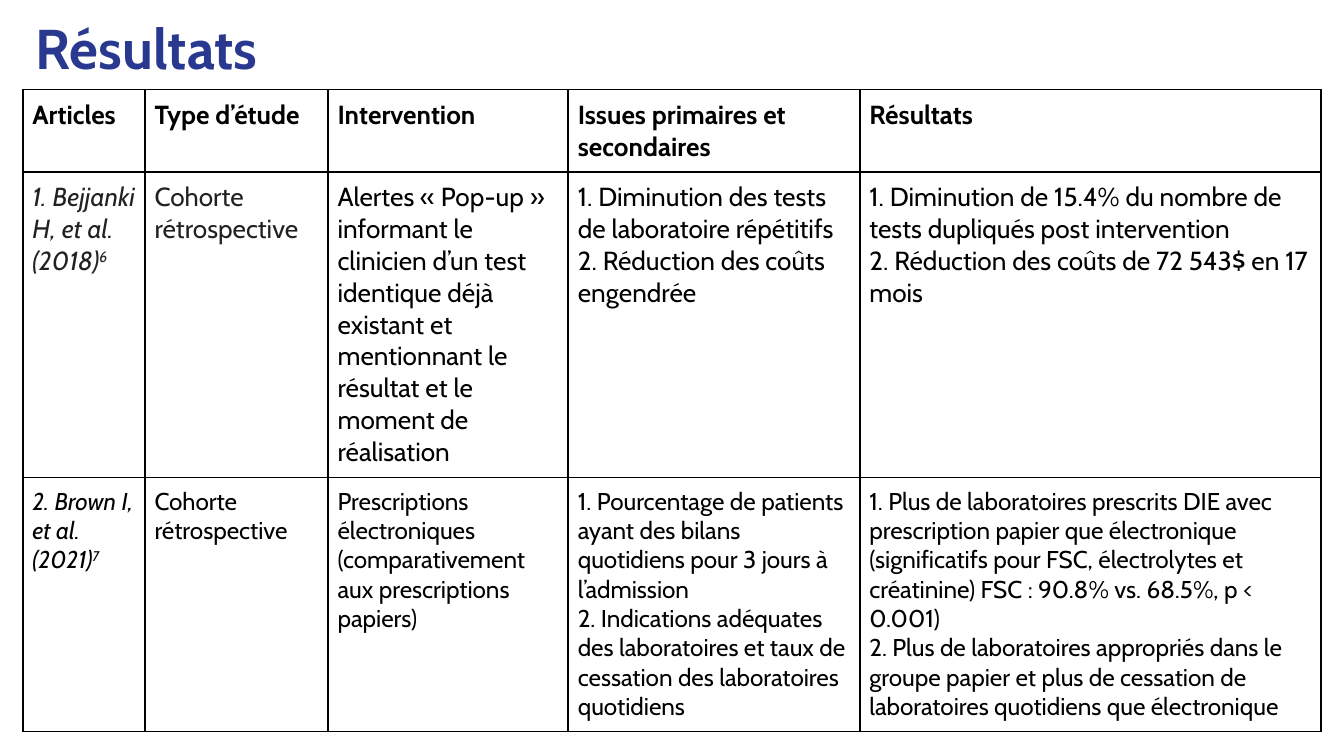
from dataclasses import dataclass

from lxml.etree import SubElement
from pptx import Presentation
from pptx.dml.color import RGBColor
from pptx.enum.text import MSO_ANCHOR, MSO_AUTO_SIZE, PP_ALIGN
from pptx.oxml.ns import qn
from pptx.util import Cm, Pt


@dataclass(frozen=True)
class Theme:
    """Fonts, colours and type sizes of the slide."""
    font: str = "Cabin"
    title: str = "2A3990"
    ink: str = "000000"
    grey: str = "212121"
    title_size: int = 30
    large: int = 14
    small: int = 13
    border: int = 1


THEME = Theme()
COLUMN_WIDTHS = (2.31, 3.46, 4.54, 5.51, 8.72)
ROW_HEIGHTS = (1.54, 5.77, 4.8)
HEADERS = ("Articles", "Type d’étude", "Intervention",
           "Issues primaires et secondaires", "Résultats")


@dataclass(frozen=True)
class Study:
    """One article: its reference, its type and the remaining columns."""
    citation: str
    note: str
    kind: str
    details: tuple
    size: int
    lead_color: str


STUDIES = (
    Study("1. Bejjanki H, et al. (2018)", "6", "Cohorte rétrospective", (
        ("Alertes « Pop-up » informant le clinicien d’un test identique déjà "
         "existant et mentionnant le résultat et le moment de réalisation",),
        ("1. Diminution des tests de laboratoire répétitifs",
         "2. Réduction des coûts engendrée"),
        ("1. Diminution de 15.4% du nombre de tests dupliqués post intervention",
         "2. Réduction des coûts de 72 543$ en 17 mois"),
    ), THEME.large, THEME.grey),
    Study("2. Brown I, et al. (2021)", "7", "Cohorte rétrospective", (
        ("Prescriptions électroniques (comparativement aux prescriptions papiers)",),
        ("1. Pourcentage de patients ayant des bilans quotidiens pour 3 jours à "
         "l’admission",
         "2. Indications adéquates des laboratoires et taux de cessation des "
         "laboratoires quotidiens"),
        ("1. Plus de laboratoires prescrits DIE avec prescription papier que "
         "électronique (significatifs pour FSC, électrolytes et créatinine) "
         "FSC : 90.8% vs. 68.5%, p < 0.001)",
         "2. Plus de laboratoires appropriés dans le groupe papier et plus de "
         "cessation de laboratoires quotidiens que électronique"),
    ), THEME.small, THEME.ink),
)


def add_run(p, text, size, color, bold=False, italic=False):
    """Append a formatted run to a paragraph and return it."""
    r = p.add_run()
    r.text = text
    font = r.font
    font.name, font.size = THEME.font, Pt(size)
    font.bold, font.italic = bold, italic
    font.color.rgb = RGBColor.from_string(color)
    return r


def add_title(s, text):
    """Place and format the slide title."""
    sp = s.shapes.title
    sp.left, sp.top, sp.width, sp.height = Cm(0.43), Cm(0), Cm(23.67), Cm(1.68)
    tf = sp.text_frame
    tf.auto_size = MSO_AUTO_SIZE.NONE
    tf.vertical_anchor = MSO_ANCHOR.TOP
    tf.margin_left = tf.margin_right = tf.margin_top = tf.margin_bottom = Cm(0.25)
    p = tf.paragraphs[0]
    p.alignment = PP_ALIGN.LEFT
    add_run(p, text, THEME.title_size, THEME.title, bold=True)


def style_cell(cell):
    """Give a cell its margins, borders and an empty fill."""
    cell.margin_left = cell.margin_right = Cm(0.18)
    cell.margin_top = cell.margin_bottom = Cm(0.18)
    tc_pr = cell._tc.get_or_add_tcPr()
    for side in ("a:lnL", "a:lnR", "a:lnT", "a:lnB"):
        ln = SubElement(tc_pr, qn(side), w=str(Pt(THEME.border)))
        fill = SubElement(ln, qn("a:solidFill"))
        SubElement(fill, qn("a:srgbClr"), val=THEME.ink)
    cell.fill.background()


def fill_cell(cell, lines, size, color=THEME.ink, bold=False):
    """Write one paragraph per line in a cell."""
    tf = cell.text_frame
    for i, line in enumerate(lines):
        p = tf.add_paragraph() if i else tf.paragraphs[0]
        add_run(p, line, size, color, bold)


def fill_citation(cell, study):
    """Write an italic reference with its raised note number."""
    p = cell.text_frame.paragraphs[0]
    add_run(p, study.citation, study.size, study.lead_color, italic=True)
    r = add_run(p, study.note, study.size, study.lead_color, italic=True)
    r.font._element.set("baseline", "30000")


def add_study_table(s):
    """Add the table of studies."""
    frame = s.shapes.add_table(
        len(ROW_HEIGHTS), len(COLUMN_WIDTHS), Cm(0.43), Cm(1.69),
        Cm(sum(COLUMN_WIDTHS)), Cm(sum(ROW_HEIGHTS)))
    table = frame.table
    table.horz_banding = table.first_row = False
    for column, width in zip(table.columns, COLUMN_WIDTHS):
        column.width = Cm(width)
    for row, height in zip(table.rows, ROW_HEIGHTS):
        row.height = Cm(height)
    for cell in table.iter_cells():
        style_cell(cell)
    for col, header in enumerate(HEADERS):
        fill_cell(table.cell(0, col), (header,), THEME.large, bold=True)
    for row, study in enumerate(STUDIES, 1):
        fill_citation(table.cell(row, 0), study)
        fill_cell(table.cell(row, 1), (study.kind,), study.size, study.lead_color)
        for col, lines in enumerate(study.details, 2):
            fill_cell(table.cell(row, col), lines, study.size)


def main():
    """Build and save the slide."""
    prs = Presentation()
    prs.slide_width, prs.slide_height = Cm(25.4), Cm(14.29)
    s = prs.slides.add_slide(prs.slide_layouts[5])
    add_study_table(s)
    add_title(s, "Résultats")
    prs.save("out.pptx")


if __name__ == "__main__":
    main()
